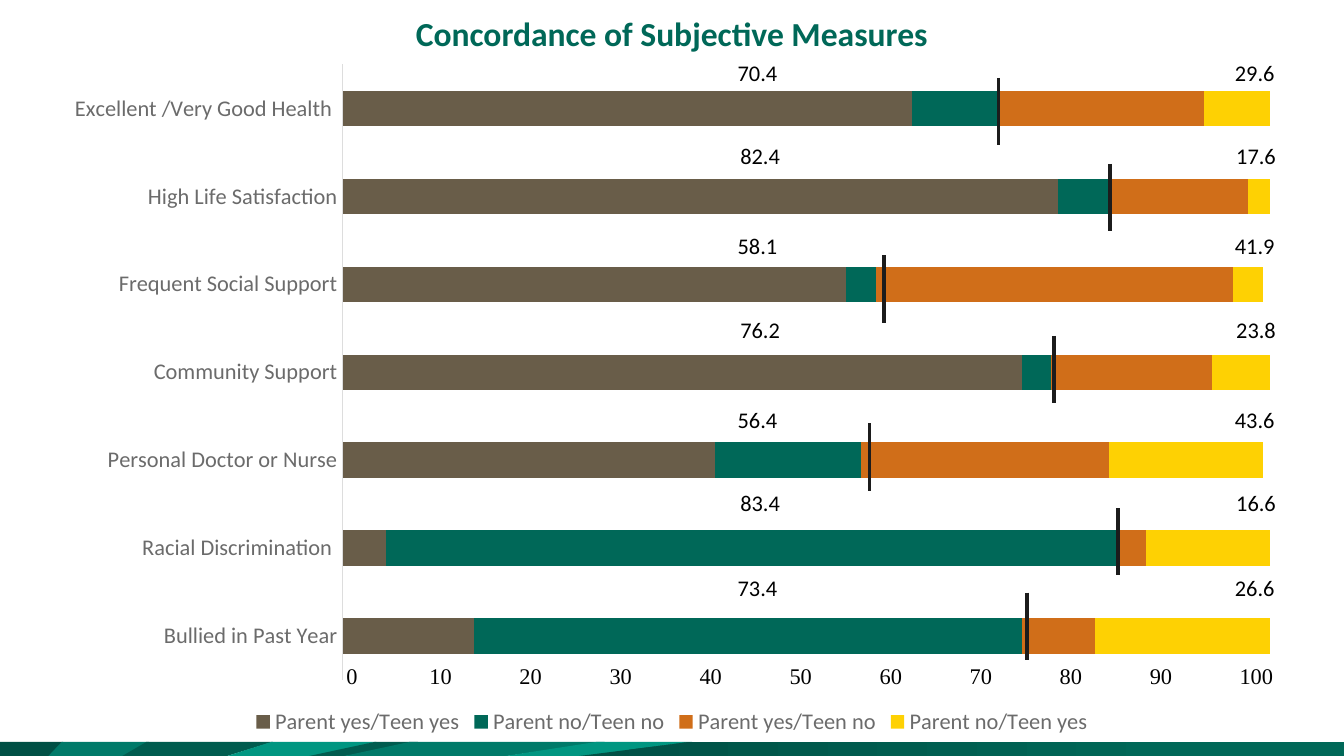
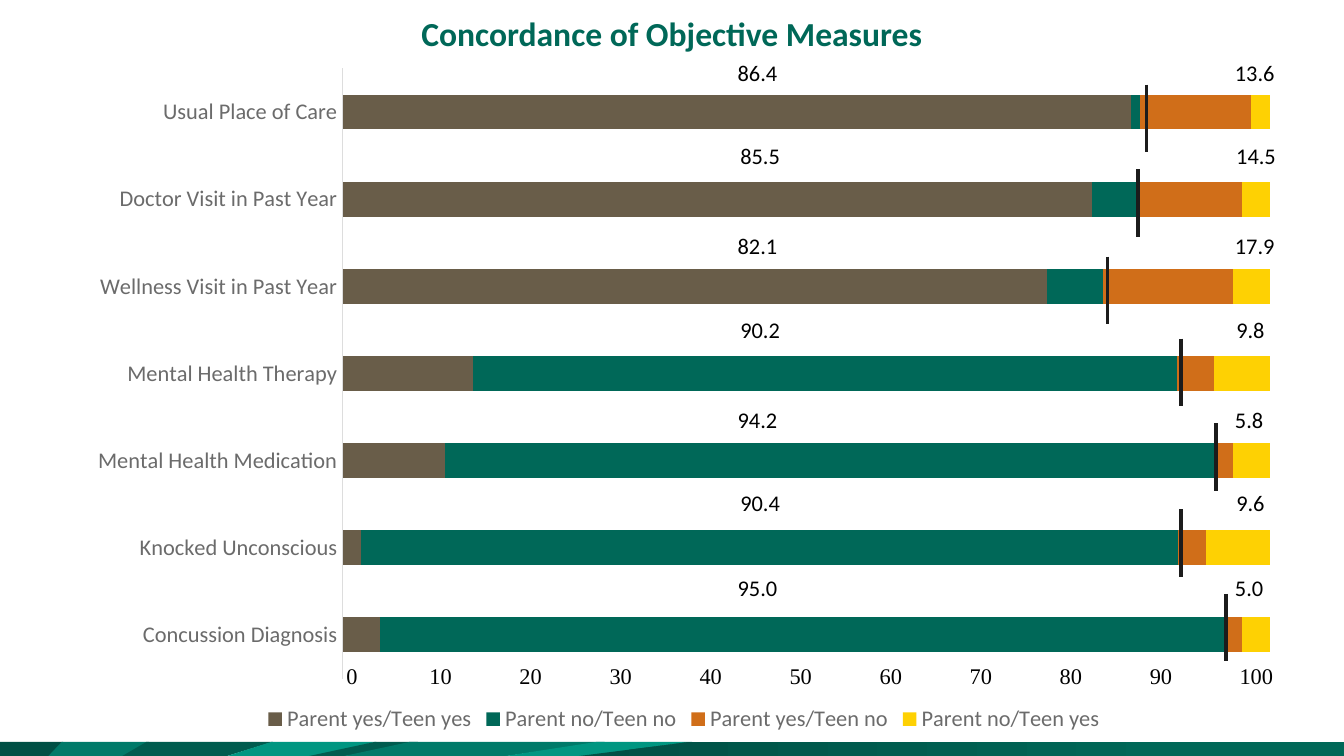
from lxml import etree
from pptx import Presentation
from pptx.chart.data import CategoryChartData
from pptx.dml.color import RGBColor
from pptx.enum.chart import XL_CHART_TYPE as CT, XL_LEGEND_POSITION as LEGEND, XL_TICK_MARK as TICK
from pptx.enum.shapes import MSO_CONNECTOR as CONN
from pptx.enum.text import MSO_AUTO_SIZE as AUTO, PP_ALIGN as AL
from pptx.oxml.ns import qn
from pptx.util import Inches, Pt

GREEN = RGBColor(0x00, 0x68, 0x58)
DEEP = RGBColor(0x00, 0x50, 0x45)
DARK = RGBColor(0x00, 0x5C, 0x4F)
MID = RGBColor(0x00, 0x7A, 0x69)
BRIGHT = RGBColor(0x00, 0x96, 0x81)
BROWN = RGBColor(0x69, 0x5D, 0x49)
ORANGE = RGBColor(0xD0, 0x6E, 0x19)
YELLOW = RGBColor(0xFE, 0xD1, 0x03)
INK = RGBColor(0x1C, 0x1C, 0x1C)
GRAY = RGBColor(0x6B, 0x6B, 0x6B)
RULE = RGBColor(0xDD, 0xDD, 0xDD)
BLACK = RGBColor(0, 0, 0)

WIDTH = 10
HEIGHT = WIDTH * 9 / 16
BAND_TOP = 5.52
# top left, top right, bottom left, bottom right, colour (None: gradient)
BAND = [
    (0, 0.47, 0, 0.39, DEEP),
    (0.46, 1.11, 0.36, 0.92, MID),
    (1.09, 2.03, 0.91, 1.69, DARK),
    (2.02, 2.8, 1.69, 2.34, BRIGHT),
    (2.79, 3.11, 2.3, 2.57, DARK),
    (3.05, 4.5, 2.56, 3.77, MID),
    (4.44, 5.15, 3.76, 4.35, BRIGHT),
    (5.14, WIDTH, 4.31, WIDTH, None),
]

LABEL = dict(name="Calibri", size=Pt(12), color=BLACK)
TICKS = dict(LABEL, name="Times New Roman")
TITLE = dict(name="Calibri", size=Pt(18), color=GREEN, bold=True)
CHART = dict(LABEL, color=INK)
AXIS = dict(LABEL, color=GRAY)

SERIES = [("Parent yes/Teen yes", BROWN), ("Parent no/Teen no", GREEN),
          ("Parent yes/Teen no", ORANGE), ("Parent no/Teen yes", YELLOW)]
LABEL_TOPS = [0.39, 1.01, 1.68, 2.3, 2.97, 3.59, 4.22]
PLOT_LEFT, PLOT_WIDTH = 2.55, 6.9

# category, series values, agreement, disagreement, marker (x, top)
SUBJECTIVE = [
    ("Excellent /Very Good Health ", (78, 12, 28, 9), "70.4", "29.6", (7.43, 0.58)),
    ("High Life Satisfaction", (98, 7, 19, 3), "82.4", "17.6", (8.26, 1.22)),
    ("Frequent Social Support", (69, 4, 49, 4), "58.1", "41.9", (6.58, 1.9)),
    ("Community Support", (93, 4, 22, 9), "76.2", "23.8", (7.84, 2.5)),
    ("Personal Doctor or Nurse", (51, 20, 34, 21), "56.4", "43.6", (6.47, 3.15)),
    ("Racial Discrimination ", (6, 100, 4, 17), "83.4", "16.6", (8.32, 3.78)),
    ("Bullied in Past Year", (18, 75, 10, 24), "73.4", "26.6", (7.64, 4.41)),
]
OBJECTIVE = [
    ("Usual Place of Care", (85, 1, 12, 2), "86.4", "13.6", (8.53, 0.63)),
    ("Doctor Visit in Past Year", (80, 5, 11, 3), "85.5", "14.5", (8.47, 1.26)),
    ("Wellness Visit in Past Year", (76, 6, 14, 4), "82.1", "17.9", (8.24, 1.91)),
    ("Mental Health Therapy", (14, 76, 4, 6), "90.2", "9.8", (8.79, 2.52)),
    ("Mental Health Medication", (11, 83, 2, 4), "94.2", "5.8", (9.05, 3.15)),
    ("Knocked Unconscious", (2, 89, 3, 7), "90.4", "9.6", (8.79, 3.79)),
    ("Concussion Diagnosis", (4, 91, 2, 3), "95.0", "5.0", (9.12, 4.42)),
]


def set_font(font, fmt):
    for key, value in fmt.items():
        if key == "color":
            font.color.rgb = value
        else:
            setattr(font, key, value)


def add_text(s, text, box, fmt, align=AL.LEFT, wrap=False, tabs=()):
    """Add a one-line text box; tabs are centred stops in inches."""
    tf = s.shapes.add_textbox(*map(Inches, box)).text_frame
    tf.word_wrap = wrap
    tf.auto_size = AUTO.SHAPE_TO_FIT_TEXT
    p = tf.paragraphs[0]
    p.alignment = align
    if tabs:
        stops = etree.SubElement(p._p.get_or_add_pPr(), qn("a:tabLst"))
        for pos in tabs:
            etree.SubElement(stops, qn("a:tab"), pos=str(Inches(pos)), algn="ctr")
    r = p.add_run()
    r.text = text
    set_font(r.font, fmt)


def add_band(prs, s):
    """Draw the footer band on s, then move it to the master for all slides."""
    for top_left, top_right, low_left, low_right, color in BAND:
        points = [(top_left, BAND_TOP), (low_left, HEIGHT), (low_right, HEIGHT)]
        fb = s.shapes.build_freeform(Inches(top_right), Inches(BAND_TOP))
        fb.add_line_segments([(Inches(x), Inches(y)) for x, y in points], close=True)
        sp = fb.convert_to_shape()
        sp.shadow.inherit = False
        sp.line.fill.background()
        if color is not None:
            sp.fill.solid()
            sp.fill.fore_color.rgb = color
        else:
            sp.fill.gradient()
            sp.fill.gradient_angle = 0
            for stop, (pos, shade) in zip(sp.fill.gradient_stops, [(0, DEEP), (0.78, GREEN)]):
                stop.position = pos
                stop.color.rgb = shade
        prs.slide_master.shapes.element.append(sp.element)


def place_plot(chart, box, plot):
    """Fix the inner plot area; box and plot are in slide inches."""
    left, top, width, height = box
    x, y, w, h = plot
    area = chart.element.find(".//" + qn("c:plotArea"))
    for old in area.findall(qn("c:layout")):
        area.remove(old)
    layout = etree.Element(qn("c:layout"))
    area.insert(0, layout)
    manual = etree.SubElement(layout, qn("c:manualLayout"))
    values = dict(layoutTarget="inner", xMode="edge", yMode="edge",
                  x=(x - left) / width, y=(y - top) / height, w=w / width, h=h / height)
    for tag, value in values.items():
        etree.SubElement(manual, qn("c:" + tag), val=str(value))


def add_bars(s, rows, kind, box, plot, maximum):
    data = CategoryChartData()
    bottom_up = rows[::-1]
    data.categories = [row[0] for row in bottom_up]
    for i, (name, _) in enumerate(SERIES):
        data.add_series(name, [row[1][i] for row in bottom_up])
    chart = s.shapes.add_chart(kind, *map(Inches, box), data).chart
    set_font(chart.font, CHART)
    chart.has_title = False
    chart.has_legend = True
    chart.legend.position = LEGEND.BOTTOM
    chart.legend.include_in_layout = False
    set_font(chart.legend.font, AXIS)

    cat, val = chart.category_axis, chart.value_axis
    cat.major_tick_mark = cat.minor_tick_mark = TICK.NONE
    cat.format.line.color.rgb = RULE
    cat.format.line.width = Pt(0.75)
    set_font(cat.tick_labels.font, AXIS)
    val.has_major_gridlines = False
    val.visible = False
    if maximum:
        val.minimum_scale, val.maximum_scale = 0, maximum

    bars = chart.plots[0]
    bars.gap_width, bars.overlap, bars.vary_by_categories = 150, 100, False
    for series, (_, color) in zip(bars.series, SERIES):
        series.format.fill.solid()
        series.format.fill.fore_color.rgb = color
    place_plot(chart, box, plot)


def add_marker(s, x, top):
    line = s.shapes.add_connector(CONN.STRAIGHT, *map(Inches, (x, top, x, top + 0.5)))
    line.line.color.rgb = INK
    line.line.width = Pt(2)
    etree.SubElement(line.element.spPr, qn("a:effectLst"))


def add_scale(s):
    text = "\t".join(str(n) for n in range(0, 101, 10))
    tabs = [0.7 + 0.67 * i for i in range(9)] + [6.77]
    add_text(s, text, (2.48, 4.88, 7.23, 0.3), TICKS, wrap=True, tabs=tabs)


def add_concordance(s, title, rows, kind, box, plot_top, plot_height, maximum=None):
    plot = (PLOT_LEFT, plot_top, PLOT_WIDTH, plot_height)
    add_bars(s, rows, kind, box, plot, maximum)
    for row in rows:
        add_marker(s, *row[4])
    add_text(s, title, (0, 0.05, WIDTH, 0.4), TITLE, AL.CENTER, wrap=True)
    add_scale(s)
    for column, lefts in ((2, (5.39, 5.41)), (3, (9.09, 9.1))):
        for i, (row, top) in enumerate(zip(rows, LABEL_TOPS)):
            text = row[column]
            width = 0.5 if len(text) == 4 else 0.41
            add_text(s, text, (lefts[i % 2], top, width, 0.3), LABEL)


def main():
    prs = Presentation()
    prs.slide_width, prs.slide_height = Inches(WIDTH), Inches(HEIGHT)
    blank = prs.slide_layouts[6]
    subjective, objective = (prs.slides.add_slide(blank) for _ in range(2))
    add_band(prs, subjective)
    add_concordance(subjective, "Concordance of Subjective Measures", SUBJECTIVE,
                    CT.BAR_STACKED, (0.37, 0.37, 9.26, 5.14), 0.48, 4.58, maximum=127)
    add_concordance(objective, "Concordance of Objective Measures", OBJECTIVE,
                    CT.BAR_STACKED_100, (0.55, 0.4, 9.08, 5.09), 0.51, 4.54)
    prs.save("out.pptx")


if __name__ == "__main__":
    main()
